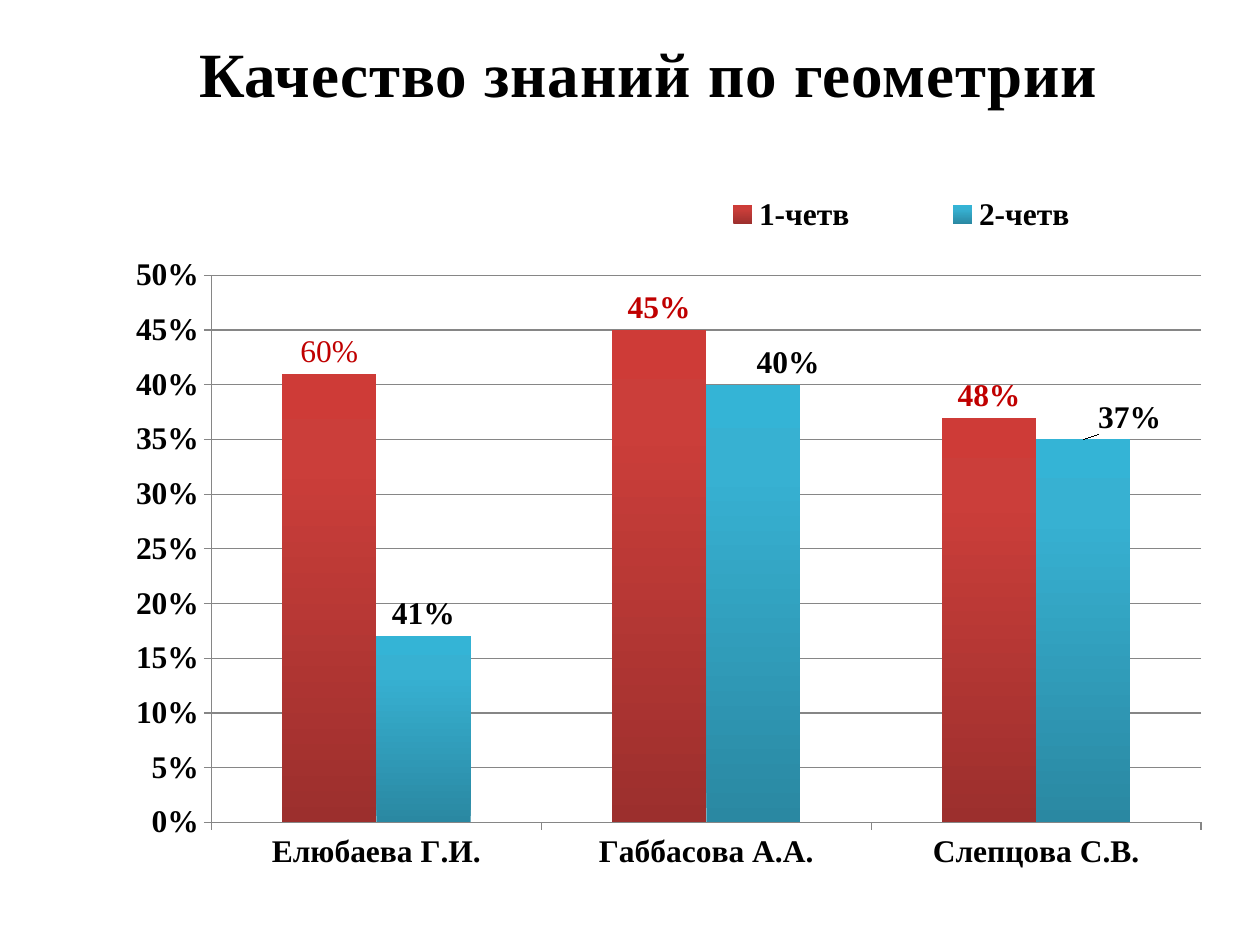
from dataclasses import dataclass

from lxml.etree import SubElement
from pptx import Presentation
from pptx.chart.data import CategoryChartData
from pptx.dml.color import RGBColor
from pptx.enum.chart import XL_CHART_TYPE, XL_LABEL_POSITION, XL_LEGEND_POSITION, XL_TICK_MARK
from pptx.enum.text import MSO_AUTO_SIZE, PP_ALIGN
from pptx.oxml import parse_xml
from pptx.oxml.ns import nsdecls, qn
from pptx.util import Inches, Pt


@dataclass(frozen=True)
class Theme:
    face: str = "Times New Roman"
    ink: str = "000000"
    rule: str = "868686"
    red: str = "C00000"
    reds: tuple = ("9C2F2D", "CB3E3A", "CE3B37")
    blues: tuple = ("2A88A2", "37B1D2", "34B4D6")
    title: int = 36
    body: int = 18


THEME = Theme()


def style(font, size=THEME.body, color=THEME.ink, bold=True):
    font.name, font.size, font.bold = THEME.face, Pt(size), bold
    font.color.rgb = RGBColor.from_string(color)


def write(frame, text, spacing=0, align=PP_ALIGN.CENTER, **look):
    para = frame.paragraphs[0]
    para.alignment = align
    run = para.add_run()
    run.text = text
    style(run.font, **look)
    if spacing:
        run.font._element.set("spc", str(int(spacing * 100)))


def place(parent, index, **shares):
    """Give a chart element a manual layout, in shares of the chart."""
    for old in parent.findall(qn("c:layout")):
        parent.remove(old)
    layout = SubElement(parent, qn("c:layout"))
    manual = SubElement(layout, qn("c:manualLayout"))
    for key, value in shares.items():
        SubElement(manual, qn(f"c:{key}")).set("val", str(value))
    parent.insert(index, layout)


def shade(series, colors):
    """Fill the bars with a gradient that runs from the bottom up."""
    stops = "".join(
        f'<a:gs pos="{pos}000"><a:srgbClr val="{color}"/></a:gs>'
        for pos, color in zip((0, 80, 100), colors)
    )
    series.format.fill.solid()
    props = series._element.find(qn("c:spPr"))
    props.replace(props.find(qn("a:solidFill")), parse_xml(
        f'<a:gradFill {nsdecls("a")} rotWithShape="1"><a:gsLst>{stops}</a:gsLst>'
        '<a:lin ang="16200000" scaled="0"/></a:gradFill>'
    ))


class Deck:
    def __init__(self, theme, wide=10, high=7.5):
        self.theme = theme
        self.show = Presentation()
        self.show.slide_width, self.show.slide_height = Inches(wide), Inches(high)
        self.slide = self.show.slides.add_slide(self.show.slide_layouts[6])

    def box(self, left, top, width, height):
        """Turn shares of the slide into lengths."""
        wide, high = self.show.slide_width, self.show.slide_height
        return int(left * wide), int(top * high), int(width * wide), int(height * high)

    def title(self, text, *area):
        frame = self.slide.shapes.add_textbox(*self.box(*area)).text_frame
        frame.word_wrap = True
        frame.auto_size = MSO_AUTO_SIZE.SHAPE_TO_FIT_TEXT
        write(frame, text, spacing=0.5, size=self.theme.title)

    def columns(self, names, rows, *area):
        data = CategoryChartData(number_format="0%")
        data.categories = names
        for row in rows:
            data.add_series(row["name"], row["values"])
        chart = self.slide.shapes.add_chart(
            XL_CHART_TYPE.COLUMN_CLUSTERED, *self.box(*area), data
        ).chart
        style(chart.font)
        chart.has_title = False
        plot = chart.plots[0]
        plot.gap_width, plot.overlap, plot.vary_by_categories = 150, 0, False
        for series, row in zip(plot.series, rows):
            shade(series, row["fill"])
            self.labels(series, row["ink"], row["notes"])
        self.axes(chart)
        self.legend(chart)
        place(chart._chartSpace.chart.plotArea, 0, layoutTarget="inner", xMode="edge",
              yMode="edge", x=0.131, y=0.155, w=0.852, h=0.721)

    def labels(self, series, ink, notes):
        """Show values; notes maps a point to its own text, weight and shift."""
        labels = series.data_labels
        labels.show_value = True
        labels.number_format, labels.number_format_is_linked = "0%", False
        labels.position = XL_LABEL_POSITION.OUTSIDE_END
        style(labels.font, color=ink)
        for point, (text, bold, shift) in notes.items():
            label = series.points[point].data_label
            if text:
                write(label.text_frame, text, color=ink, bold=bold)
            else:
                style(label.font, color=ink, bold=bold)
            label.position = XL_LABEL_POSITION.OUTSIDE_END
            if shift:
                place(label._get_or_add_dLbl(), 1, x=shift, y=0)

    def axes(self, chart):
        scale = chart.value_axis
        scale.minimum_scale, scale.maximum_scale, scale.major_unit = 0, 0.5, 0.05
        scale.has_major_gridlines = True
        scale.tick_labels.number_format = "0%"
        scale.tick_labels.number_format_is_linked = False
        lines = [scale.major_gridlines.format.line]
        for axis in (scale, chart.category_axis):
            axis.major_tick_mark = XL_TICK_MARK.OUTSIDE
            style(axis.tick_labels.font)
            lines.append(axis.format.line)
        for line in lines:
            line.color.rgb = RGBColor.from_string(self.theme.rule)
            line.width = Pt(0.75)

    def legend(self, chart):
        chart.has_legend = True
        legend = chart.legend
        legend.position = XL_LEGEND_POSITION.RIGHT
        legend.include_in_layout = False
        style(legend.font)
        place(legend._element, 1, xMode="edge", yMode="edge", x=0.5, y=0.03, w=0.45, h=0.09)


def main():
    deck = Deck(THEME)
    deck.title("Качество знаний по геометрии", 0.03, 0.03, 0.97, 0.09)
    names = ["Елюбаева Г.И.", "Габбасова А.А.", "Слепцова С.В."]
    rows = [
        dict(name="1-четв", values=(0.41, 0.45, 0.37), fill=THEME.reds, ink=THEME.red,
             notes={0: ("60%", False, 0), 2: ("48%", True, 0)}),
        dict(name="2-четв", values=(0.17, 0.4, 0.35), fill=THEME.blues, ink=THEME.ink,
             notes={0: ("41%", True, 0), 1: (None, True, 0.03), 2: ("37%", True, 0.04)}),
    ]
    deck.columns(names, rows, 0.047, 0.167, 0.922, 0.803)
    deck.show.save("out.pptx")


if __name__ == "__main__":
    main()
